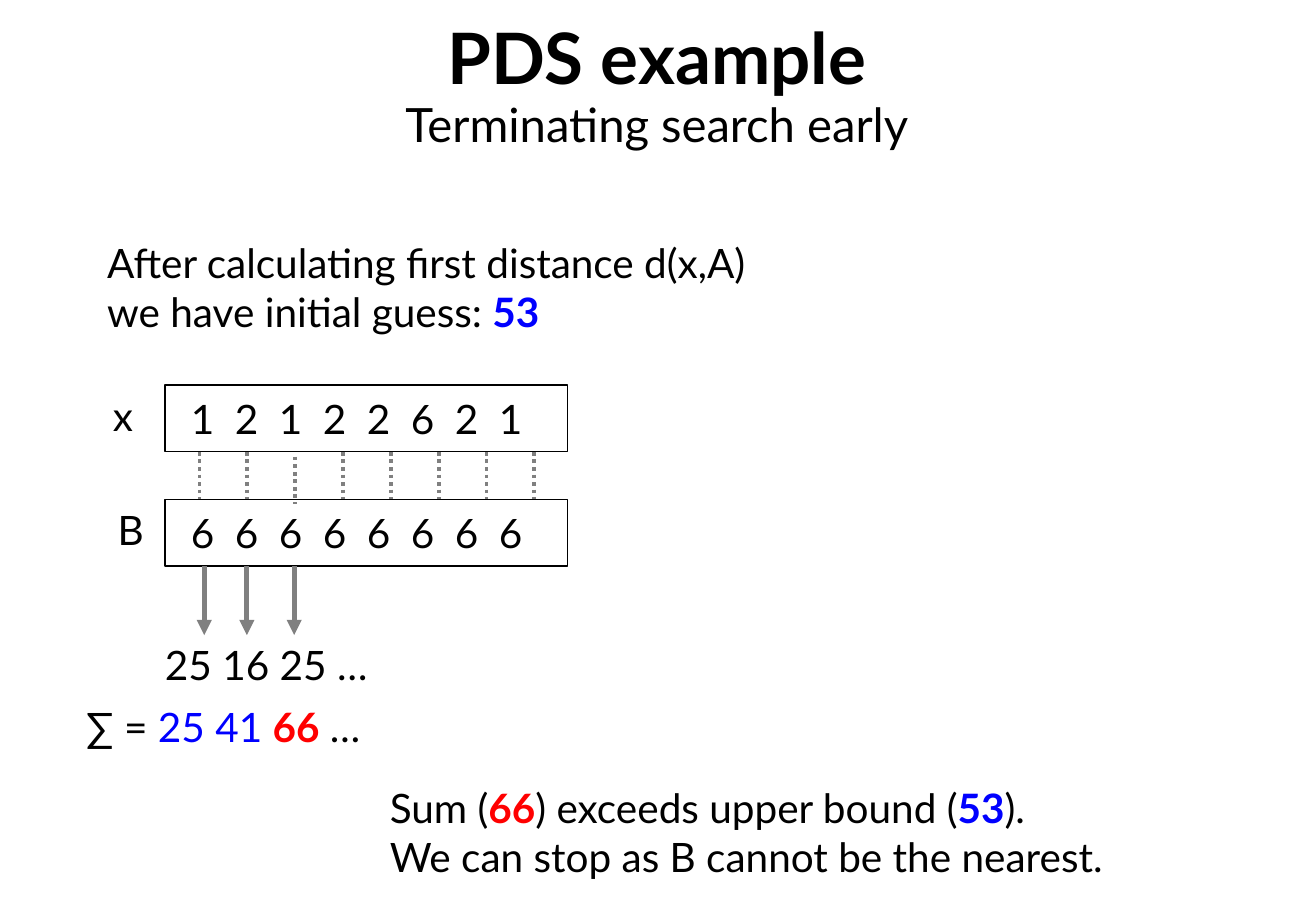
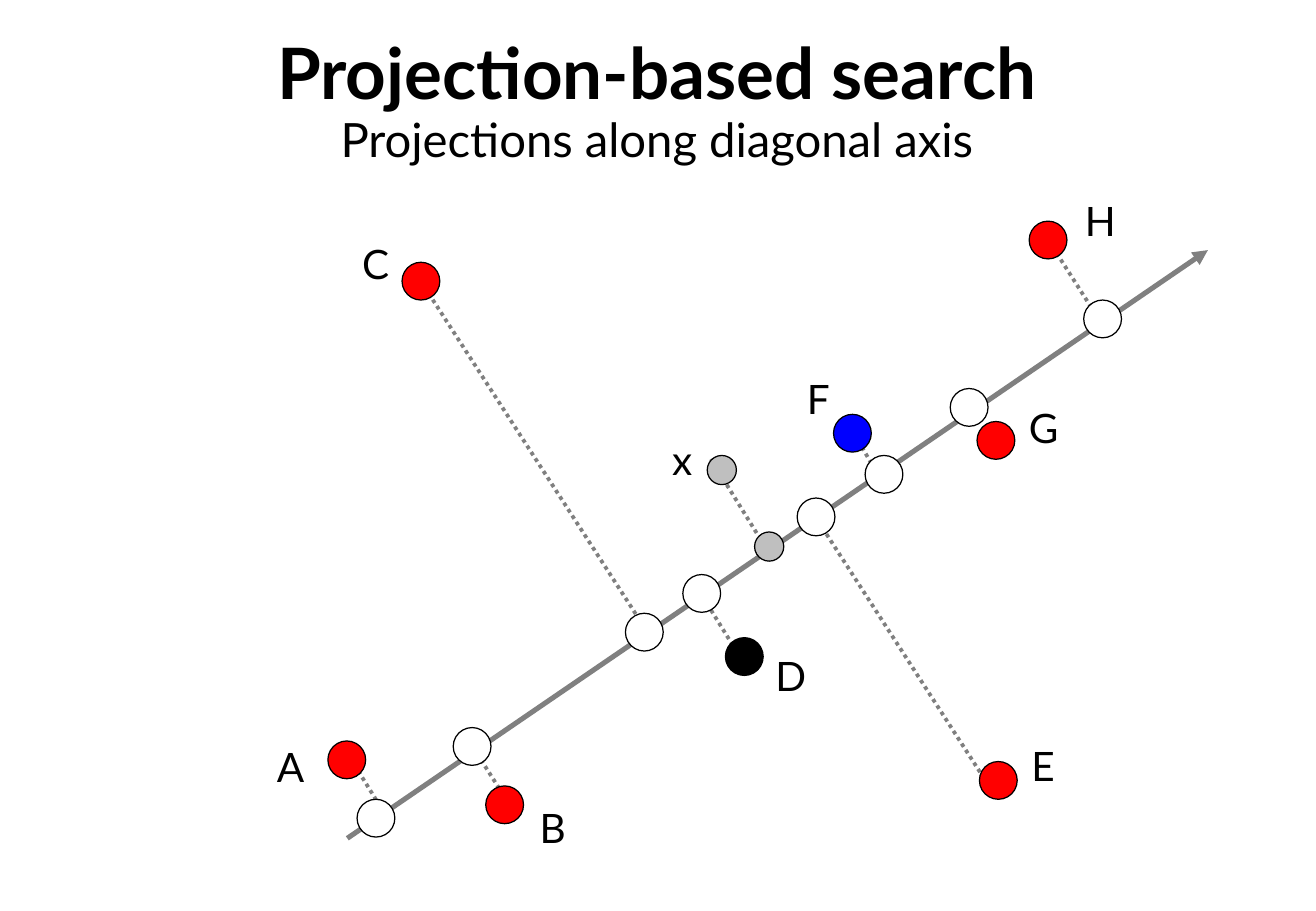
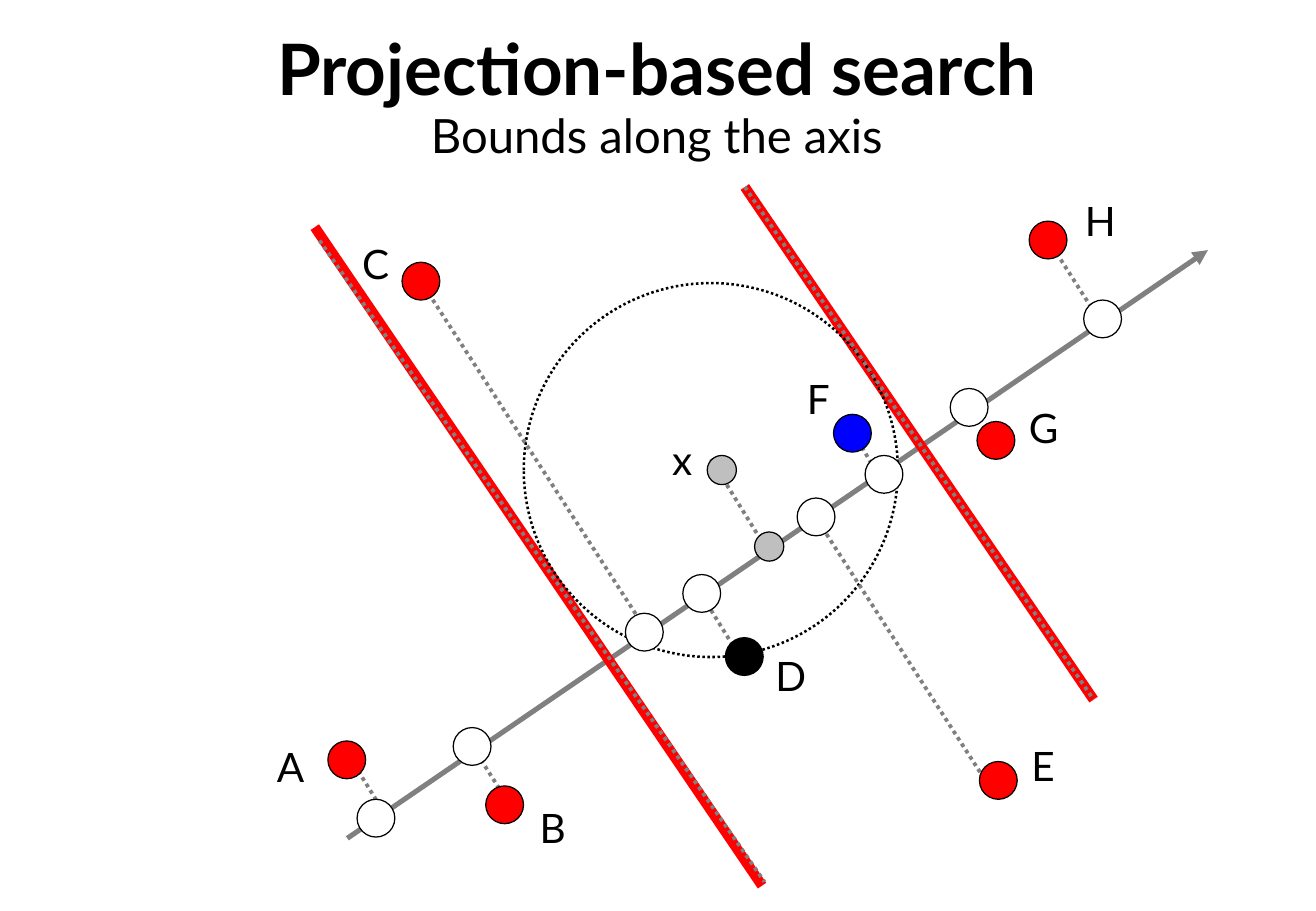
import pptx
import pptx.util
import pptx.dml.color
import pptx.enum.dml
import pptx.enum.shapes
import pptx.enum.text
import pptx.oxml.ns
import pptx.oxml.xmlchemy

Cm = pptx.util.Cm
Pt = pptx.util.Pt
SHAPES = pptx.enum.shapes.MSO_SHAPE
DOTTED = pptx.enum.dml.MSO_LINE.ROUND_DOT

COLORS = {
    "black": "000000",
    "white": "FFFFFF",
    "gray": "808080",
    "silver": "BFBFBF",
    "red": "FF0000",
    "blue": "0000FF",
}
BODY = {"name": "Lato", "size": Pt(24), "bold": False}
TITLE = {"name": "Lato", "size": Pt(42), "bold": True}
SUBTITLE = {"name": "Lato", "size": Pt(28), "bold": False}
CENTERED = {"alignment": pptx.enum.text.PP_ALIGN.CENTER, "line_spacing": 0.93}

LINE_HEIGHT = 1.02
DOT = 0.79
SMALL_DOT = 0.61

# Name: colour, diameter, point, foot on the axis, label corner, dotted line
POINTS = {
    "A": ("red", DOT, (2.25, 12.89), (2.86, 14.11), (0.79, 12.52), (2.24, 12.72, 3.23, 14.32)),
    "B": ("red", DOT, (5.55, 13.83), (4.87, 12.61), (6.28, 13.79), (4.8, 12.49, 5.82, 14.09)),
    "C": ("red", DOT, (3.8, 2.88), (8.47, 10.22), (2.57, 2), (3.79, 2.87, 8.51, 10.18)),
    "D": ("black", DOT, (10.56, 10.73), (9.67, 9.41), (11.21, 10.61), (9.53, 9.22, 10.52, 10.82)),
    "E": ("red", DOT, (15.87, 13.32), (12.06, 7.81), (16.56, 12.49), (12.02, 7.77, 15.85, 13.71)),
    "F": ("blue", DOT, (12.82, 6.06), (13.48, 6.92), (11.87, 4.82), (12.78, 5.94, 13.47, 7.13)),
    "G": ("red", DOT, (15.82, 6.21), (15.26, 5.52), (16.51, 5.43), None),
    "H": ("red", DOT, (16.91, 2.02), (18.05, 3.67), (17.68, 1.09), (16.92, 2.03, 17.94, 3.63)),
    "x": ("silver", SMALL_DOT, (10.09, 6.83), (11.08, 8.43), (9.05, 6.09), (9.86, 6.6, 10.85, 8.2)),
}


def rgb(color):
    return pptx.dml.color.RGBColor.from_string(COLORS[color])


def set_attributes(target, values):
    for name, value in values.items():
        setattr(target, name, value)


def append_element(parent, tag, attributes=None):
    element = pptx.oxml.xmlchemy.OxmlElement(tag)
    for name, value in (attributes or {}).items():
        element.set(name, value)
    parent.append(element)
    return element


def add_text(slide, left, top, width, paragraphs, height=None, fill=None,
             paragraph_format=None, anchor=pptx.enum.text.MSO_ANCHOR.TOP):
    """Each paragraph is a list of (text, colour, font format) runs."""
    height = height or LINE_HEIGHT * len(paragraphs)
    shape = slide.shapes.add_textbox(Cm(left), Cm(top), Cm(width), Cm(height))
    if fill:
        shape.fill.solid()
        shape.fill.fore_color.rgb = rgb(fill)
    frame = shape.text_frame
    set_attributes(frame, {
        "word_wrap": True, "vertical_anchor": anchor, "margin_left": 0,
        "margin_top": 0, "margin_right": 0, "margin_bottom": 0,
    })
    for index, runs in enumerate(paragraphs):
        paragraph = frame.add_paragraph() if index else frame.paragraphs[0]
        set_attributes(paragraph, paragraph_format or {})
        for text, color, font_format in runs:
            run = paragraph.add_run()
            run.text = text
            set_attributes(run.font, font_format)
            run.font.color.rgb = rgb(color)
    return shape


def plain(text, color="black"):
    return text, color, BODY


def strong(text, color):
    return text, color, {**BODY, "bold": True}


def add_outline(slide, kind, left, top, width, height, fill=None, line_format=None):
    shape = slide.shapes.add_shape(kind, Cm(left), Cm(top), Cm(width), Cm(height))
    shape.shadow.inherit = False
    if fill:
        shape.fill.solid()
        shape.fill.fore_color.rgb = rgb(fill)
    else:
        shape.fill.background()
    shape.line.color.rgb = rgb("black")
    set_attributes(shape.line, line_format or {"width": Pt(0.75)})


def add_dot(slide, center_x, center_y, diameter, fill):
    add_outline(slide, SHAPES.OVAL, center_x - diameter / 2, center_y - diameter / 2,
                diameter, diameter, fill)


def add_line(slide, left, top, ends, color="gray", width=2.25, dotted=False, arrow=False):
    """Draws from (x1, y1) to (x2, y2), given relative to left and top."""
    x1, y1, x2, y2 = ends
    connector = slide.shapes.add_connector(
        pptx.enum.shapes.MSO_CONNECTOR.STRAIGHT,
        Cm(left + x1), Cm(top + y1), Cm(left + x2), Cm(top + y2))
    connector.line.color.rgb = rgb(color)
    connector.line.width = Pt(width)
    if dotted:
        connector.line.dash_style = DOTTED
    properties = connector.element.spPr
    if arrow:
        line = properties.find(pptx.oxml.ns.qn("a:ln"))
        append_element(line, "a:tailEnd", {"type": "triangle"})
    append_element(properties, "a:effectLst")


def add_title(slide, top, title, subtitle):
    add_text(slide, 1.93, top, 23.6,
             [[(title, "black", TITLE)], [(subtitle, "black", SUBTITLE)]],
             height=2.79, paragraph_format=CENTERED,
             anchor=pptx.enum.text.MSO_ANCHOR.MIDDLE)


def add_vector(slide, left, top, name, name_left, values):
    """A framed row of values, set on equally spaced tab stops."""
    add_text(slide, left + name_left, top + 0.13, 0.8, [[plain(name)]])
    add_outline(slide, SHAPES.RECTANGLE, left, top, 8.41, 1.4)
    row = add_text(slide, left + 0.54, top + 0.18, 7.6, [[plain("\t".join(values))]])
    properties = row.text_frame.paragraphs[0]._p.get_or_add_pPr()
    tabs = append_element(properties, "a:tabLst")
    for column in range(1, len(values)):
        append_element(tabs, "a:tab", {"pos": str(Cm(0.92 * column)), "algn": "l"})


def add_vector_comparison(slide, left, top):
    add_vector(slide, left, top, "x", -1.09, "12122621")
    add_vector(slide, left, top + 2.39, "B", -0.99, "66666666")
    for column in range(8):
        x = 0.72 + column
        drop = 0.1 if column == 2 else 0
        add_line(slide, left, top, (x, 1.4 + drop, x, 2.39 + drop), dotted=True)
    for x in (0.82, 1.71, 2.7):
        add_line(slide, left, top, (x, 3.79, x, 5.23), width=3, arrow=True)
    add_text(slide, left, top + 5.34, 6, [[plain("25 16 25 …")]])
    add_text(slide, left - 1.65, top + 6.63, 8, [[
        plain("∑ = "), plain("25 41 ", "blue"), strong("66", "red"), plain(" …")]])


def add_bounds(slide, left, top):
    """Two bounding lines and the circle of the current best distance."""
    upper = (17.86, 11.63, 10.57, 0.91)
    for ends in (upper, (10.93, 15.52, 1.58, 1.75)):
        add_line(slide, left, top, ends, color="red", width=6)
    add_outline(slide, SHAPES.OVAL, left + 5.95, top + 2.92, 7.82, 7.82,
                line_format={"width": Pt(1.5), "dash_style": DOTTED})
    for ends in ((1.68, 2.03, 10.98, 15.44), upper[2:] + upper[:2]):
        add_line(slide, left, top, ends, dotted=True)


def add_projection(slide, left, top, bounded):
    add_line(slide, left, top, (2.26, 14.53, 20.25, 2.23), width=3, arrow=True)
    if bounded:
        add_bounds(slide, left, top)
    for *_, ends in POINTS.values():
        if ends:
            add_line(slide, left, top, ends, dotted=True)
    for name, (color, diameter, point, foot, label, _) in POINTS.items():
        foot_color = "silver" if name == "x" else "white"
        for (x, y), fill in ((foot, foot_color), (point, color)):
            add_dot(slide, left + x, top + y, diameter, fill)
        add_text(slide, left + label[0], top + label[1], 0.8, [[plain(name)]])


def build_example_slide(slide):
    add_vector_comparison(slide, 3.45, 8.05)
    add_text(slide, 2.24, 4.98, 14.4, [
        [plain("After calculating first distance d(x,A)")],
        [plain("we have initial guess: "), strong("53", "blue")],
    ], fill="white")
    add_text(slide, 8.15, 16.38, 15.8, [
        [plain("Sum ("), strong("66", "red"), plain(") exceeds upper bound ("),
         strong("53", "blue"), plain(").")],
        [plain("We can stop as B cannot be the nearest.")],
    ], fill="white")
    add_title(slide, 0.43, "PDS example", "Terminating search early")


def build_projection_slide(slide, title_top, subtitle, bounded):
    add_title(slide, title_top, "Projection-based search", subtitle)
    add_projection(slide, 5, 3, bounded)


def main():
    presentation = pptx.Presentation()
    presentation.slide_width = Cm(27.51)
    presentation.slide_height = Cm(19.05)
    blank = presentation.slide_layouts[6]
    example, projections, bounds = (presentation.slides.add_slide(blank) for _ in range(3))
    build_example_slide(example)
    build_projection_slide(projections, 0.74, "Projections along diagonal axis", False)
    build_projection_slide(bounds, 0.66, "Bounds along the axis", True)
    presentation.save("out.pptx")


if __name__ == "__main__":
    main()
